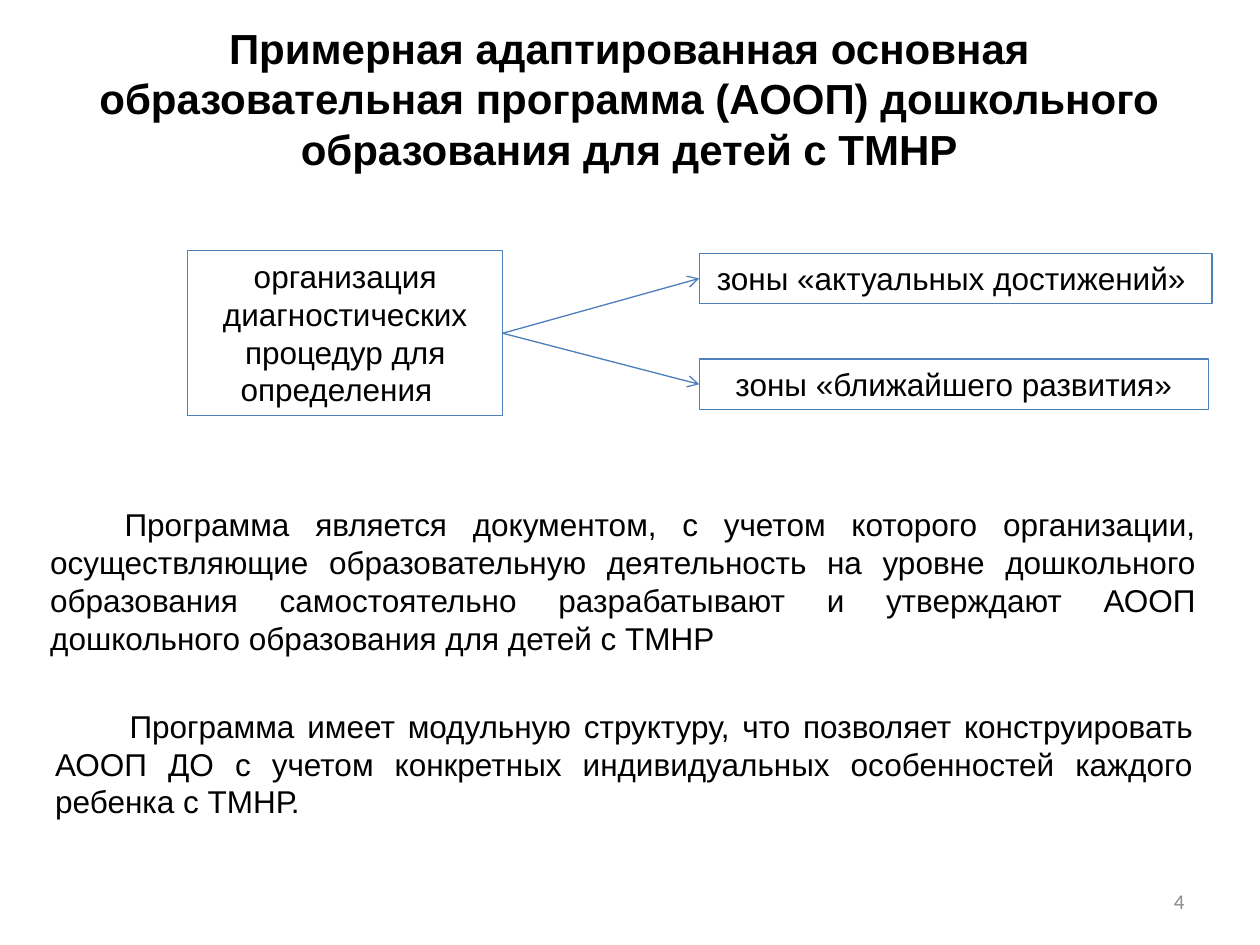
from lxml import etree
from pptx import Presentation
from pptx import util as u
from pptx.dml.color import RGBColor
from pptx.enum import shapes, text
from pptx.oxml.ns import qn

COLORS = {"text": "000000", "border": "4F81BD", "arrow": "4B7EBC", "number": "8C8C8C"}
ALIGN = text.PP_ALIGN
RIGHT_SIDE, LEFT_SIDE = 3, 1


def color(name):
    return RGBColor.from_string(COLORS[name])


class SlideBuilder:
    """Holds the text style and the current slide."""

    font = "Arial"
    size = 18
    line_width = u.Pt(0.75)

    def __init__(self, page):
        self.page = page

    def add_words(self, shape, words, align, size=None, font=None, bold=False,
                  fill="text", indent=0, anchor=text.MSO_ANCHOR.TOP):
        frame = shape.text_frame
        frame.word_wrap = True
        frame.vertical_anchor = anchor
        para = frame.paragraphs[0]
        para.alignment = align
        if indent:
            properties = para._p.get_or_add_pPr()
            properties.set("marL", "0")
            properties.set("indent", str(u.Inches(indent)))
        span = para.add_run()
        span.text = words
        span.font.name = font or self.font
        span.font.size = u.Pt(size or self.size)
        span.font.bold = bold
        span.font.color.rgb = color(fill)

    def label(self, area, words, align, **style):
        box = self.page.shapes.add_textbox(*map(u.Inches, area))
        self.add_words(box, words, align, **style)

    def framed(self, area, words):
        box = self.page.shapes.add_shape(
            shapes.MSO_SHAPE.RECTANGLE, *map(u.Inches, area))
        box.shadow.inherit = False
        box.fill.background()
        box.line.color.rgb = color("border")
        box.line.width = self.line_width
        self.add_words(box, words, ALIGN.CENTER)
        return box

    def arrow(self, source, target):
        link = self.page.shapes.add_connector(shapes.MSO_CONNECTOR.STRAIGHT, 0, 0, 0, 0)
        link.begin_connect(source, RIGHT_SIDE)
        link.end_connect(target, LEFT_SIDE)
        link.line.color.rgb = color("arrow")
        link.line.width = self.line_width
        etree.SubElement(link.line._get_or_add_ln(), qn("a:tailEnd"), type="arrow")
        etree.SubElement(link._element.spPr, qn("a:effectLst"))


def main():
    deck = Presentation()
    deck.slide_width, deck.slide_height = u.Inches(10), u.Inches(7.5)
    builder = SlideBuilder(deck.slides.add_slide(deck.slide_layouts[6]))

    # Title
    builder.label(
        (0.43, 0.13, 9.13, 1.31),
        "Примерная адаптированная основная образовательная программа (АООП) "
        "дошкольного образования для детей с ТМНР",
        ALIGN.CENTER, size=24, bold=True)

    # Diagnostics and the two zones it determines
    diagnostics = builder.framed(
        (1.49, 1.99, 2.5, 1.31),
        "организация диагностических процедур для определения  ")
    zones = [
        (2.01, 4.07, "зоны «актуальных достижений» "),
        (2.85, 4.04, "зоны «ближайшего развития»"),
    ]
    for top, width, words in zones:
        zone = builder.framed((5.55, top, width, 0.4), words)
        builder.arrow(diagnostics, zone)

    # Paragraphs about the programme
    paragraphs = [
        ((0.3, 3.96, 9.29, 1.31),
         "Программа является документом, с учетом которого организации, "
         "осуществляющие образовательную деятельность на уровне дошкольного "
         "образования самостоятельно разрабатывают и утверждают АООП "
         "дошкольного образования для детей с ТМНР"),
        ((0.34, 5.56, 9.23, 1.01),
         "Программа имеет модульную структуру, что позволяет конструировать "
         "АООП ДО с учетом конкретных индивидуальных особенностей каждого "
         "ребенка с ТМНР."),
    ]
    for area, words in paragraphs:
        builder.label(area, words, ALIGN.JUSTIFY, indent=0.59)

    # Slide number
    builder.label((7.17, 6.95, 2.33, 0.4), "4", ALIGN.RIGHT, size=12,
                  font="Calibri", fill="number", anchor=text.MSO_ANCHOR.MIDDLE)

    deck.save("out.pptx")


if __name__ == "__main__":
    main()
